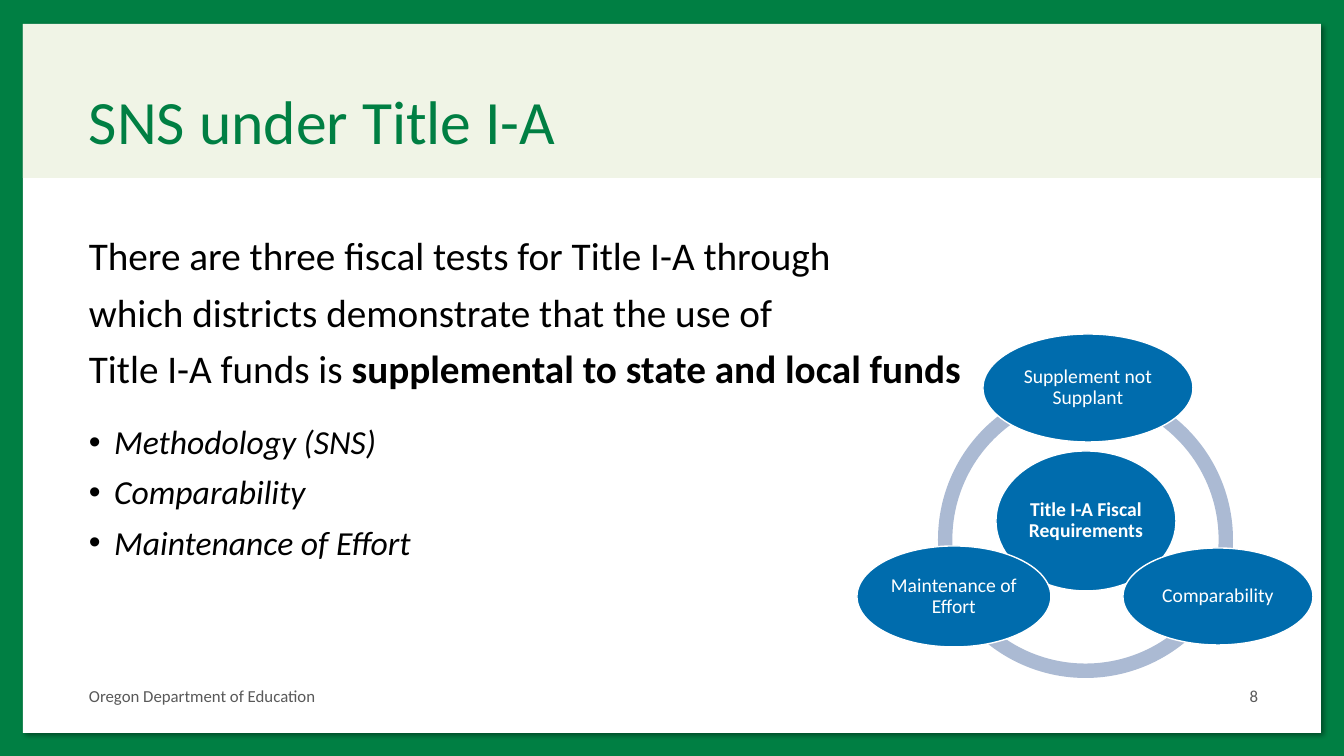
from dataclasses import dataclass

from lxml import etree
from pptx import Presentation, util as u
from pptx.dml.color import RGBColor
from pptx.enum import shapes, text
from pptx.oxml.ns import qn

TITLE = "SNS under Title I-A"
STATEMENT = [
    [("There are three fiscal tests for Title I-A through", False)],
    [("which districts demonstrate that the use of", False)],
    [("Title I-A funds is ", False), ("supplemental to state and local funds", True)],
]
TESTS = ["Methodology (SNS)", "Comparability", "Maintenance of Effort"]
FOOTER = "Oregon Department of Education"
PAGE = "8"

# left, top, width, height in px
PANEL = (23, 24, 1298, 709)
HEADER = (23, 24, 1298, 154)
TITLE_BOX = (79, 50, 1188, 113)
BODY_BOX = (79, 232, 1188, 422)
FOOTER_BOX = (79, 676, 316, 40)
PAGE_BOX = (950, 676, 318, 40)

# left, top, start and end angle in degrees
RING_SIZE, RING_THICKNESS = 313, 0.046
RING = [(938, 383, 157.85, 267.34), (929, 365, 30, 150), (920, 383, 274.2, 22.25)]
OVALS = [
    ("Title I-A Fiscal Requirements", (996, 451, 180, 140), True),
    ("Supplement not Supplant", (983, 334, 210, 108), False),
    ("Comparability", (1123, 548, 190, 97), False),
    ("Maintenance of Effort", (857, 546, 194, 101), False),
]


@dataclass(frozen=True)
class Theme:
    font: str = "Calibri"
    green: str = "007F43"
    pale: str = "F0F4E6"
    white: str = "FFFFFF"
    black: str = "000000"
    grey: str = "595959"
    blue: str = "006CAD"
    ring: str = "ABBAD3"
    title: int = 44
    statement: int = 28
    tests: int = 24
    oval: int = 14
    footer: int = 12


T = Theme()
SHAPE = shapes.MSO_SHAPE
ALIGN = text.PP_ALIGN
ANCHOR = text.MSO_ANCHOR


def px(n):
    return u.Emu(round(n * 914400 / 100.8))


def rgb(code):
    return RGBColor.from_string(code)


def add_shape(s, kind, box, fill, line=None):
    sp = s.shapes.add_shape(kind, *map(px, box))
    sp.shadow.inherit = False
    sp.fill.solid()
    sp.fill.fore_color.rgb = rgb(fill)
    if line:
        sp.line.color.rgb = rgb(line)
        sp.line.width = u.Pt(1)
    else:
        sp.line.fill.background()
    return sp


def add_box(s, box, anchor):
    tf = s.shapes.add_textbox(*map(px, box)).text_frame
    tf.word_wrap = True
    tf.vertical_anchor = anchor
    return tf


def write(tf, content, *, size, color, bold=False, italic=False,
          align=ALIGN.LEFT, before=0, spacing=0.9, bullet=False):
    """Add one paragraph; content is a string or a list of (text, bold) runs."""
    first = tf.paragraphs[0]
    p = first if not first.runs else tf.add_paragraph()
    p.alignment = align
    p.line_spacing = spacing
    p.space_before = u.Pt(before)
    if bullet:
        pPr = p._p.get_or_add_pPr()
        pPr.set("marL", str(u.Inches(0.25)))
        pPr.set("indent", str(-u.Inches(0.25)))
        etree.SubElement(pPr, qn("a:buFont"), typeface="Arial")
        etree.SubElement(pPr, qn("a:buChar"), char="•")
    runs = [(content, bold)] if isinstance(content, str) else content
    for words, strong in runs:
        r = p.add_run()
        r.text = words
        r.font.name = T.font
        r.font.size = u.Pt(size)
        r.font.color.rgb = rgb(color)
        r.font.bold = strong
        r.font.italic = italic


def cast_shadow(sp):
    effects = sp._element.spPr.find(qn("a:effectLst"))
    shadow = etree.SubElement(
        effects, qn("a:outerShdw"), blurRad=str(u.Pt(4)), dist=str(u.Pt(3)),
        dir=str(45 * 60000), algn="tl", rotWithShape="0")
    color = etree.SubElement(shadow, qn("a:srgbClr"), val=T.black)
    etree.SubElement(color, qn("a:alpha"), val="40000")


def add_frame(s):
    s.background.fill.solid()
    s.background.fill.fore_color.rgb = rgb(T.green)
    cast_shadow(add_shape(s, SHAPE.RECTANGLE, PANEL, T.white))
    add_shape(s, SHAPE.RECTANGLE, HEADER, T.pale)
    write(add_box(s, TITLE_BOX, ANCHOR.BOTTOM), TITLE, size=T.title, color=T.green)


def add_body(s):
    tf = add_box(s, BODY_BOX, ANCHOR.TOP)
    for i, line in enumerate(STATEMENT):
        write(tf, line, size=T.statement, color=T.black, before=10 if i else 0)
    for i, test in enumerate(TESTS):
        write(tf, test, size=T.tests, color=T.black, italic=True,
              before=10 if i else 24, bullet=True)


def add_cycle(s):
    for left, top, start, end in RING:
        arc = add_shape(s, SHAPE.BLOCK_ARC, (left, top, RING_SIZE, RING_SIZE), T.ring)
        # angles are stored in 60000ths of a degree, adjustments in 100000ths
        for i, value in enumerate((start * 0.6, end * 0.6, RING_THICKNESS)):
            arc.adjustments[i] = value
    for label, box, bold in OVALS:
        tf = add_shape(s, SHAPE.OVAL, box, T.blue, T.white).text_frame
        tf.word_wrap = True
        tf.vertical_anchor = ANCHOR.MIDDLE
        tf.margin_left = tf.margin_right = tf.margin_top = tf.margin_bottom = px(2)
        write(tf, label, size=T.oval, color=T.white, bold=bold, align=ALIGN.CENTER)


def add_footer(s):
    for words, box, align in [(FOOTER, FOOTER_BOX, ALIGN.LEFT),
                              (PAGE, PAGE_BOX, ALIGN.RIGHT)]:
        write(add_box(s, box, ANCHOR.MIDDLE), words, size=T.footer,
              color=T.grey, align=align, spacing=1.0)


def main():
    prs = Presentation()
    prs.slide_width, prs.slide_height = px(1344), px(756)
    s = prs.slides.add_slide(prs.slide_layouts[6])
    add_frame(s)
    add_body(s)
    add_cycle(s)
    add_footer(s)
    prs.save("out.pptx")


if __name__ == "__main__":
    main()
